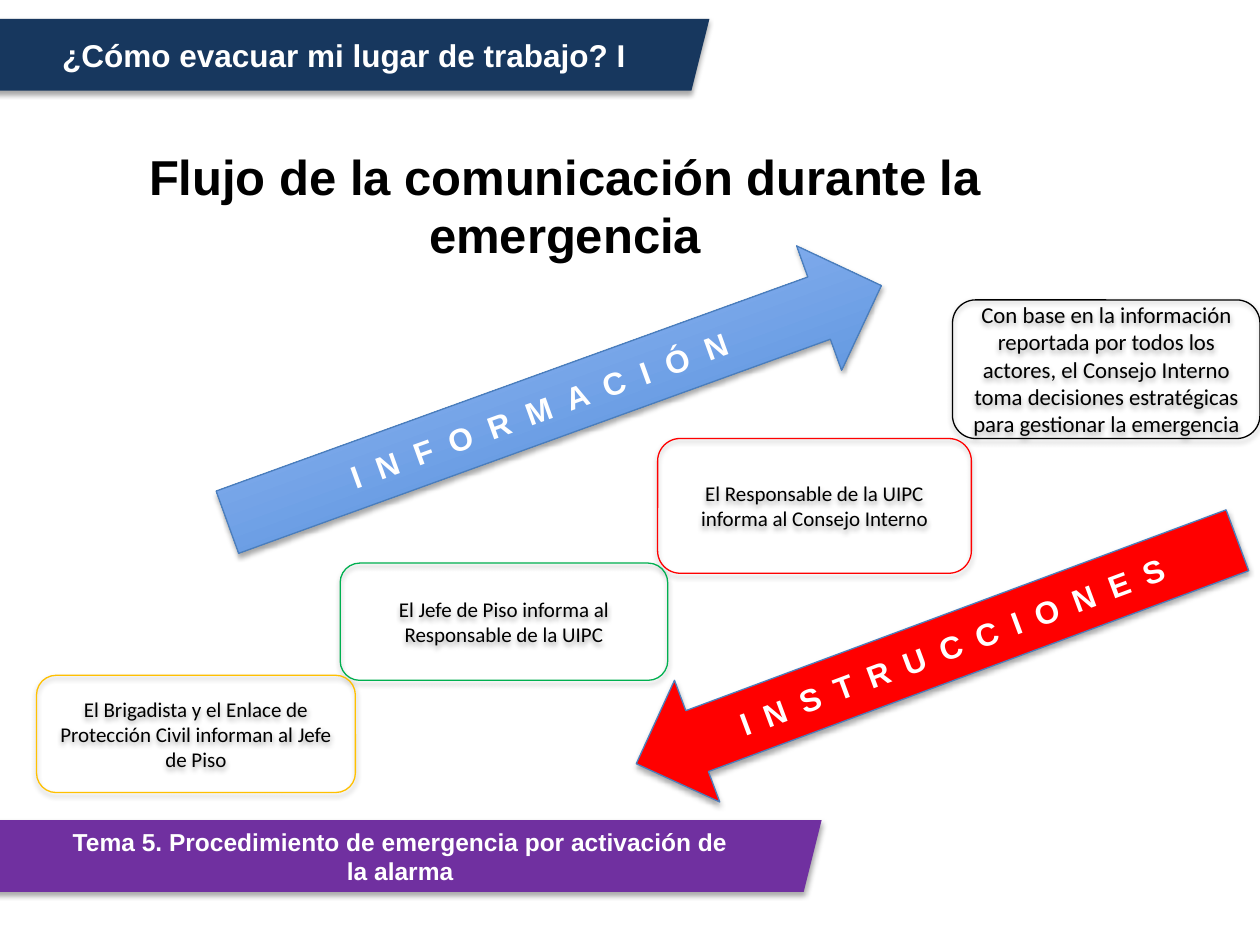
from dataclasses import dataclass

from lxml.etree import SubElement
from pptx import Presentation
from pptx.dml.color import RGBColor
from pptx.enum.shapes import MSO_SHAPE
from pptx.enum.text import MSO_ANCHOR, MSO_AUTO_SIZE, PP_ALIGN
from pptx.oxml.ns import qn
from pptx.util import Pt


@dataclass(frozen=True)
class Theme:
    heading_font: str = "Arial"
    body_font: str = "Calibri"
    navy: str = "17375E"
    purple: str = "7030A0"
    black: str = "000000"
    white: str = "FFFFFF"
    red: str = "FF0000"
    green: str = "00B050"
    amber: str = "FFC000"
    arrow_line: str = "4B7EBC"
    arrow_blues: tuple = ("3F80CE", "A4C4FF")
    title_size: float = 28
    label_size: float = 18
    topic_size: float = 14
    decision_size: float = 13
    step_size: float = 12
    line_width: float = 0.75


THEME = Theme()


def rgb(value):
    return RGBColor.from_string(value)


def write_text(frame, text, *, size, color, font, bold=False,
               anchor=MSO_ANCHOR.MIDDLE, tracking=0):
    """Fill a text frame with one centred paragraph."""
    frame.word_wrap = True
    frame.vertical_anchor = anchor
    para = frame.paragraphs[0]
    para.alignment = PP_ALIGN.CENTER
    span = para.add_run()
    span.text = text
    span.font.size = Pt(size)
    span.font.name = font
    span.font.bold = bold
    span.font.color.rgb = rgb(color)
    if tracking:
        span.font._element.set("spc", str(round(tracking * 100)))


def add_soft_shadow(shape):
    shape.shadow.inherit = False
    effects = shape._element.spPr.find(qn("a:effectLst"))
    shadow = SubElement(effects, qn("a:outerShdw"), blurRad=str(Pt(3.1)),
                        dist=str(Pt(1.8)), dir="5400000", rotWithShape="0")
    color = SubElement(shadow, qn("a:srgbClr"), val=THEME.black)
    SubElement(color, qn("a:alpha"), val="35000")


def add_block(page, kind, box, *, fill=None, line=None):
    """Add a shadowed shape; no fill or line colour means none is drawn."""
    shape = page.shapes.add_shape(kind, *(Pt(length) for length in box))
    if fill:
        shape.fill.solid()
        shape.fill.fore_color.rgb = rgb(fill)
    else:
        shape.fill.background()
    if line:
        shape.line.color.rgb = rgb(line)
        shape.line.width = Pt(THEME.line_width)
    else:
        shape.line.fill.background()
    add_soft_shadow(shape)
    return shape


def add_banner(page, box, text, fill, size):
    banner = add_block(page, MSO_SHAPE.PARALLELOGRAM, box, fill=fill)
    write_text(banner.text_frame, text, size=size, color=THEME.white,
               font=THEME.heading_font, bold=True)


def add_step(page, box, text, line, size):
    step = add_block(page, MSO_SHAPE.ROUNDED_RECTANGLE, box, line=line)
    write_text(step.text_frame, text, size=size, color=THEME.black,
               font=THEME.body_font)


def add_flow_arrow(page, box, word, kind, rotation, tracking, fill=None):
    """Add a slanted arrow with spaced letters; it is blue unless filled."""
    arrow = add_block(page, kind, box, fill=fill, line=THEME.arrow_line)
    arrow.rotation = rotation
    if not fill:
        arrow.fill.gradient()
        arrow.fill.gradient_angle = 90
        for stop, color in zip(arrow.fill.gradient_stops, THEME.arrow_blues):
            stop.color.rgb = rgb(color)
    write_text(arrow.text_frame, " ".join(word), size=THEME.label_size,
               color=THEME.white, font=THEME.heading_font, bold=True,
               tracking=tracking)


def add_title(page, box, text):
    title = page.shapes.title
    title.left, title.top, title.width, title.height = map(Pt, box)
    title.text_frame.auto_size = MSO_AUTO_SIZE.NONE
    write_text(title.text_frame, text, size=THEME.title_size,
               color=THEME.black, font=THEME.heading_font, bold=True,
               anchor=MSO_ANCHOR.TOP)


def main():
    deck = Presentation()
    deck.slide_width, deck.slide_height = Pt(720), Pt(540)
    page = deck.slides.add_slide(deck.slide_layouts[5])

    # Header and footer banners
    add_banner(page, (-12.2, 10.8, 417.6, 41),
               "¿Cómo evacuar mi lugar de trabajo? I",
               THEME.navy, THEME.label_size)
    add_banner(page, (-12.2, 468.7, 481.7, 41),
               "Tema 5. Procedimiento de emergencia por activación de la alarma",
               THEME.purple, THEME.topic_size)

    # Staircase of steps, from the top down
    steps = (
        ((544.3, 171.4, 175.7, 79.2),
         "Con base en la información reportada por todos los actores, el "
         "Consejo Interno toma decisiones estratégicas para gestionar la "
         "emergencia", THEME.black, THEME.decision_size),
        ((375.8, 250.6, 179.3, 77),
         "El Responsable de la UIPC informa al Consejo Interno",
         THEME.red, THEME.step_size),
        ((194.4, 321.8, 187.2, 67),
         "El Jefe de Piso informa al Responsable de la UIPC",
         THEME.green, THEME.step_size),
        ((20.9, 385.9, 182.2, 67),
         "El Brigadista y el Enlace de Protección Civil informan al Jefe "
         "de Piso", THEME.amber, THEME.step_size),
    )
    for box, text, line, size in steps:
        add_step(page, box, text, line, size)

    add_title(page, (68.4, 79.9, 509, 74.9),
              "Flujo de la comunicación durante la emergencia")

    # Information goes up, instructions come down
    add_flow_arrow(page, (118.1, 193, 397.4, 75.6), "INFORMACIÓN",
                   MSO_SHAPE.RIGHT_ARROW, 340.1, 2.5)
    add_flow_arrow(page, (352.1, 335.5, 366.5, 74.2), "INSTRUCCIONES",
                   MSO_SHAPE.LEFT_ARROW, 339.6, 2, fill=THEME.red)

    deck.save("out.pptx")


if __name__ == "__main__":
    main()
